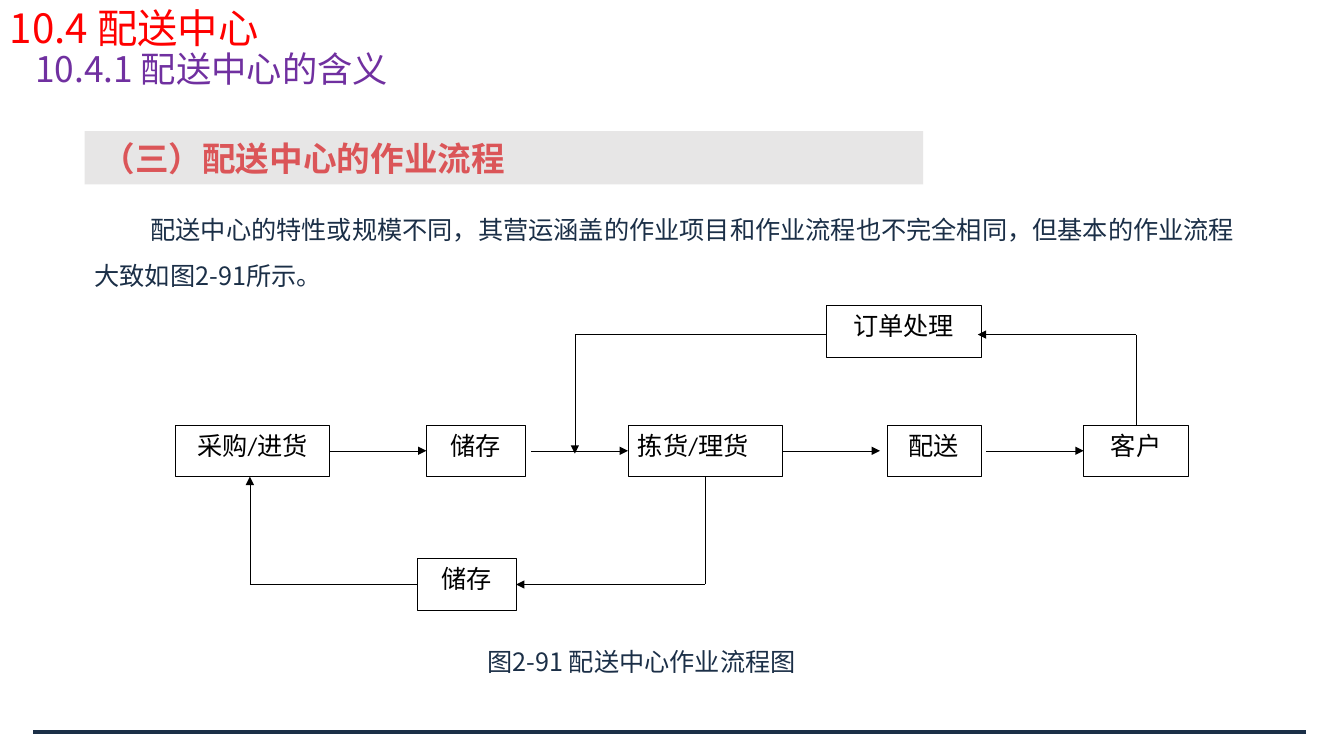
import pptx
import pptx.util
import pptx.dml.color
import pptx.enum.shapes
import pptx.enum.text
import pptx.oxml
import pptx.oxml.ns
import lxml.etree

Pt = pptx.util.Pt
Color = pptx.dml.color.RGBColor
Kind = pptx.enum.shapes.MSO_SHAPE
Align = pptx.enum.text.PP_ALIGN
Anchor = pptx.enum.text.MSO_ANCHOR
qn = pptx.oxml.ns.qn

NAVY = Color(0x1B, 0x2F, 0x47)
BLACK = Color(0, 0, 0)
RED = Color(0xFF, 0, 0)
PURPLE = Color(0x70, 0x30, 0xA0)
CORAL = Color(0xDB, 0x55, 0x58)
GREY = Color(0xE7, 0xE6, 0xE6)
SANS = "Noto Sans CJK SC"


def style(para, size, color, latin=SANS, asian=SANS, indent=0, margin=0):
    props = para._p.get_or_add_pPr()
    props.set("indent", str(Pt(indent)))
    props.set("marL", str(Pt(margin)))
    for run in para.runs:
        run.font.size = Pt(size)
        run.font.color.rgb = color
        run.font.name = latin
        east = lxml.etree.SubElement(run.font._element, qn("a:ea"))
        east.set("typeface", asian)


def link(x1, y1, x2, y2, color, width, arrow):
    line = slide.shapes.add_connector(
        pptx.enum.shapes.MSO_CONNECTOR.STRAIGHT, Pt(x1), Pt(y1), Pt(x2), Pt(y2))
    line.line.color.rgb = color
    line.line.width = Pt(width)
    if arrow:
        tail = lxml.etree.SubElement(line.line._get_or_add_ln(), qn("a:tailEnd"))
        tail.set("type", "triangle")
    lxml.etree.SubElement(line._element.spPr, qn("a:effectLst"))
    return line


deck = pptx.Presentation()
deck.slide_width, deck.slide_height = Pt(960), Pt(540)
slide = deck.slides.add_slide(deck.slide_layouts[6])

link(933, 522.7, 23.8, 522.7, NAVY, 3, False)

band = slide.shapes.add_shape(Kind.RECTANGLE, Pt(60.5), Pt(93.6), Pt(599), Pt(38.2))
band.shadow.inherit = False
band.fill.solid()
band.fill.fore_color.rgb = GREY
band.line.fill.background()
band.text_frame.text = "（三）配送中心的作业流程"
band.text_frame.vertical_anchor = Anchor.MIDDLE
head = band.text_frame.paragraphs[0]
head.alignment = Align.LEFT
style(head, 24, CORAL, indent=5)
head.runs[0].font.bold = True

notes = [
    ("图2-91 配送中心作业流程图", 337, 447.1, 244.8, 39.6, 4),
    ("配送中心的特性或规模不同，其营运涵盖的作业项目和作业流程也不完全相同，"
     "但基本的作业流程大致如图2-91所示。", 60.5, 139, 833, 72, 40),
]
for text, x, y, wide, high, indent in notes:
    note = slide.shapes.add_textbox(Pt(x), Pt(y), Pt(wide), Pt(high))
    note.text_frame.word_wrap = True
    note.text_frame.text = text
    para = note.text_frame.paragraphs[0]
    para.line_spacing = 1.5
    style(para, 18, NAVY, indent=indent)

ROW, TOP, LOW, HIGH = 303.5, 218, 399, 37
MID, UPPER, LOWER = ROW + HIGH / 2, 239, LOW + HIGH / 2
steps = {
    "buy": ("采购/进货", 125.3, ROW, 110.2),
    "store": ("储存", 304.6, ROW, 70.6),
    "send": ("配送", 633.6, ROW, 67),
    "client": ("客户", 774, ROW, 75),
    "pick": ("拣货/理货", 448.6, ROW, 110.2),
    "order": ("订单处理", 590.4, TOP, 110.2),
    "stock": ("储存", 298.1, LOW, 70.6),
}
boxes = {}
for name, (text, x, y, wide) in steps.items():
    box = slide.shapes.add_shape(Kind.RECTANGLE, Pt(x), Pt(y), Pt(wide), Pt(HIGH))
    box.shadow.inherit = False
    box.fill.background()
    box.line.color.rgb = BLACK
    box.line.width = Pt(0.25)
    box.text_frame.text = text
    box.text_frame.vertical_anchor = Anchor.TOP
    para = box.text_frame.paragraphs[0]
    para.alignment = Align.LEFT if name == "pick" else Align.CENTER
    style(para, 18, BLACK, latin="Calibri")
    boxes[name] = box

flows = [
    (235.5, MID, 304.6, MID, True, ("buy", 3), ("store", 1)),
    (379.4, MID, 448.6, MID, True, None, ("pick", 1)),
    (558.8, MID, 628.6, MID, True, ("pick", 3), None),
    (704.2, MID, 774, MID, True, None, ("client", 1)),
    (178.5, LOWER, 298.1, LOWER, False, None, ("stock", 1)),
    (410.6, UPPER, 589.7, UPPER, False, None, None),
    (503.7, ROW + HIGH, 503.7, LOWER, False, ("pick", 2), None),
    (811.5, UPPER, 811.5, ROW, False, None, ("client", 0)),
    (811.5, UPPER, 698.4, UPPER, True, None, None),
    (503.7, LOWER, 368.7, LOWER, True, None, ("stock", 3)),
    (178.5, LOWER, 178.5, ROW + HIGH, True, None, None),
    (410.6, UPPER, 410.6, 324, True, None, None),
]
for x1, y1, x2, y2, arrow, start, end in flows:
    line = link(x1, y1, x2, y2, BLACK, 0.25, arrow)
    if start:
        line.begin_connect(boxes[start[0]], start[1])
    if end:
        line.end_connect(boxes[end[0]], end[1])

title = slide.shapes.add_textbox(Pt(0), Pt(6), Pt(828), Pt(104))
title.text_frame.word_wrap = True
title.text_frame.margin_top = 0
title.text_frame.text = "10.4 配送中心\n10.4.1 配送中心的含义"
main, part = title.text_frame.paragraphs
main.line_spacing = part.line_spacing = 0.9
style(main, 28.8, RED, "Noto Sans CJK JP", "Noto Sans CJK JP")
style(part, 25.2, PURPLE, margin=18)

deck.save("out.pptx")
